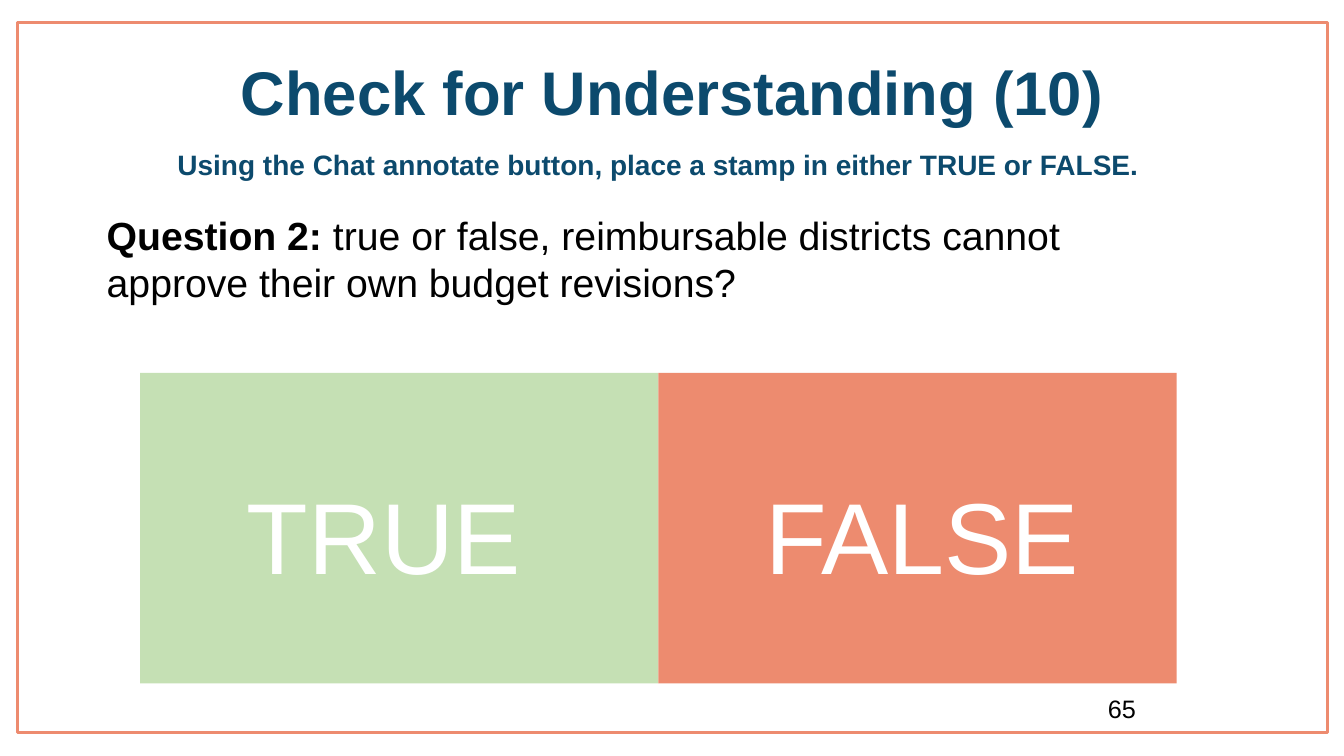
from dataclasses import dataclass

from pptx import Presentation
from pptx.dml.color import RGBColor
from pptx.enum.shapes import MSO_SHAPE
from pptx.enum.text import MSO_ANCHOR, PP_ALIGN
from pptx.util import Inches, Pt


@dataclass(frozen=True)
class Theme:
    font: str = "Arial"
    navy: str = "0C4A6D"
    coral: str = "ED8B6F"
    green: str = "C5E0B4"
    black: str = "000000"
    white: str = "FFFFFF"
    title: int = 44
    subtitle: int = 20
    body: int = 28
    answer: int = 72
    number: int = 18


theme = Theme()


def write(sp, runs, size, color, heading=False):
    """Fill a shape with one paragraph of (text, bold) runs."""
    tf = sp.text_frame
    tf.word_wrap = True
    tf.vertical_anchor = MSO_ANCHOR.MIDDLE if heading else MSO_ANCHOR.TOP
    p = tf.paragraphs[0]
    p.alignment = PP_ALIGN.CENTER if heading else PP_ALIGN.LEFT
    p.line_spacing = 0.9 if heading else 1.0
    for text, bold in runs:
        r = p.add_run()
        r.text = text
        r.font.name = theme.font
        r.font.size = Pt(size)
        r.font.bold = bold
        r.font.color.rgb = RGBColor.from_string(color)


def add_rect(left, top, width, height):
    sp = slide.shapes.add_shape(MSO_SHAPE.RECTANGLE, Inches(left), Inches(top),
                                Inches(width), Inches(height))
    sp.shadow.inherit = False
    return sp


prs = Presentation()
prs.slide_width = Inches(13.33)
prs.slide_height = Inches(7.5)
slide = prs.slides.add_slide(prs.slide_layouts[5])

# Frame
frame = add_rect(0.17, 0.22, 13, 7.05)
frame.fill.background()
frame.line.color.rgb = RGBColor.from_string(theme.coral)
frame.line.width = Pt(2)

# Headings
title = slide.shapes.title
title.left, title.top = Inches(0.17), Inches(0.22)
title.width, title.height = Inches(13), Inches(1.45)
write(title, [("Check for Understanding (10)", True)], theme.title, theme.navy, heading=True)

subtitle = slide.shapes.add_textbox(Inches(0.03), Inches(0.93), Inches(13), Inches(1.45))
write(subtitle,
      [("Using the Chat annotate button, place a stamp in either TRUE or FALSE.", True)],
      theme.subtitle, theme.navy, heading=True)

# Question
question = slide.shapes.add_textbox(Inches(0.96), Inches(2.05), Inches(11.15), Inches(1.04))
write(question,
      [("Question 2: ", True),
       ("true or false, reimbursable districts cannot approve their own budget revisions?", False)],
      theme.body, theme.black)

# Answer panels, side by side
panel_width = 5.14
for i, (answer, color) in enumerate([("TRUE", theme.green), ("FALSE", theme.coral)]):
    left = 1.39 + i * panel_width
    panel = add_rect(left, 3.7, panel_width, 3.08)
    panel.fill.solid()
    panel.fill.fore_color.rgb = RGBColor.from_string(color)
    panel.line.fill.background()
    label = slide.shapes.add_textbox(Inches(left + 0.96), Inches(4.65), Inches(3.63), Inches(1.31))
    write(label, [(answer, False)], theme.answer, theme.white)

# Slide number
number = slide.shapes.add_textbox(Inches(10.89), Inches(6.83), Inches(2.44), Inches(0.5))
write(number, [("65", False)], theme.number, theme.black)

prs.save("out.pptx")
